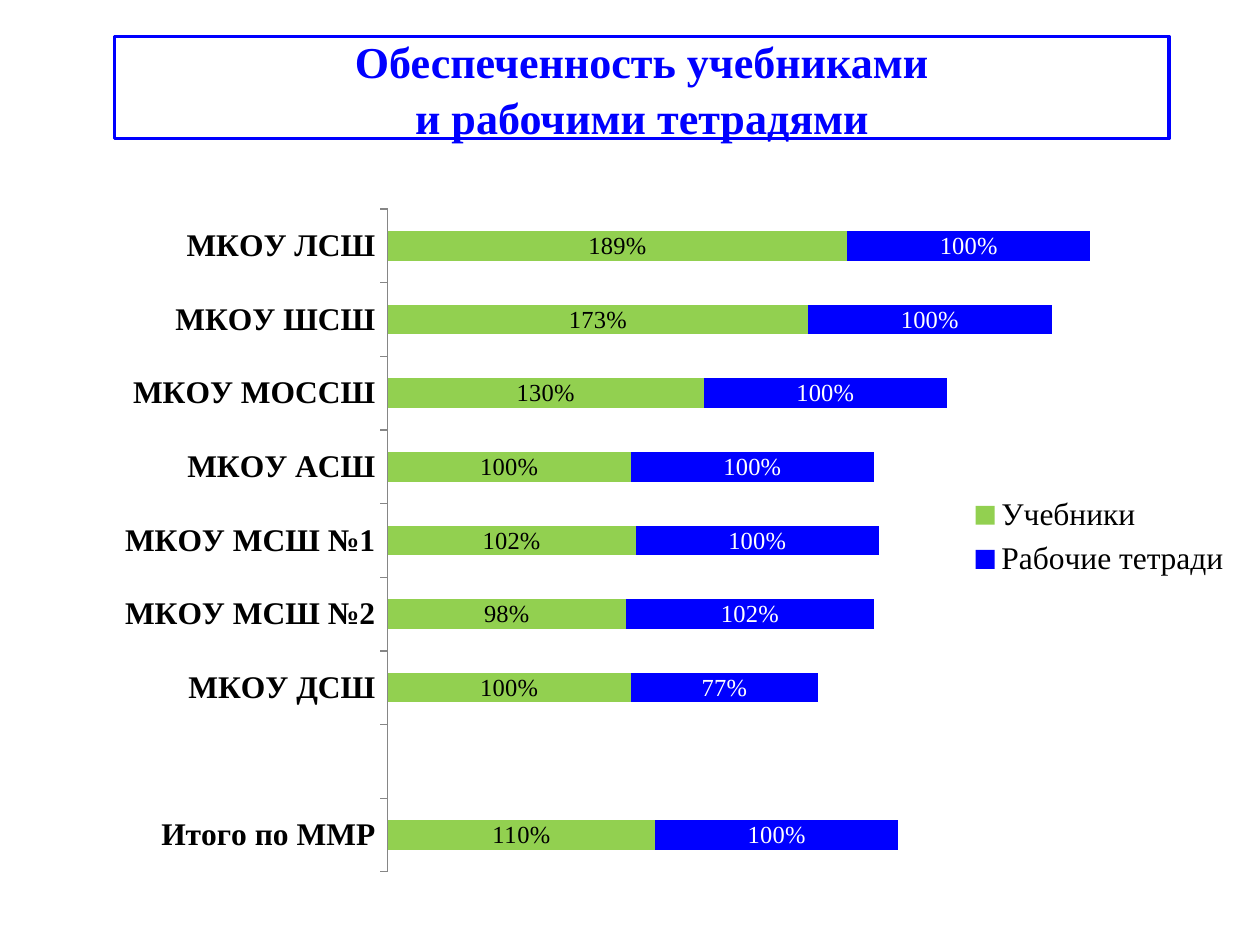
from lxml import etree
from pptx import Presentation
from pptx.chart.data import CategoryChartData
from pptx.dml.color import RGBColor
from pptx.enum.chart import XL_CHART_TYPE, XL_LABEL_POSITION, XL_LEGEND_POSITION, XL_TICK_MARK
from pptx.enum.shapes import MSO_SHAPE
from pptx.enum.text import MSO_ANCHOR, PP_ALIGN
from pptx.oxml.ns import qn
from pptx.util import Inches, Pt

STACKED_BARS = XL_CHART_TYPE.BAR_STACKED
LABEL_CENTER = XL_LABEL_POSITION.CENTER
LEGEND_RIGHT = XL_LEGEND_POSITION.RIGHT
TICK_OUTSIDE, TICK_NONE = XL_TICK_MARK.OUTSIDE, XL_TICK_MARK.NONE
RECTANGLE = MSO_SHAPE.RECTANGLE
MIDDLE, CENTER = MSO_ANCHOR.MIDDLE, PP_ALIGN.CENTER

BLUE = RGBColor(0x00, 0x00, 0xFF)
GREEN = RGBColor(0x92, 0xD0, 0x50)
GRAY = RGBColor(0x86, 0x86, 0x86)
BLACK = RGBColor(0x00, 0x00, 0x00)
WHITE = RGBColor(0xFF, 0xFF, 0xFF)
FONT = "Times New Roman"

TITLE_BOX = (0.91, 0.29, 8.37, 0.81)
CHART_BOX = (0.2, 1.47, 9.69, 5.59)
# Shares of the chart: left, top, width, height
PLOT_AREA = (0.297, 0.034, 0.697, 0.941)
LEGEND_AREA = (0.77, 0.43, 0.22, 0.14)

TITLE_LINES = ["Обеспеченность учебниками", "и рабочими тетрадями"]
# Rows run from the bottom of the chart upwards
ROWS = [
    ("Итого по ММР", 110, 100),
    ("", None, None),
    ("МКОУ ДСШ", 100, 77),
    ("МКОУ МСШ №2", 98, 102),
    ("МКОУ МСШ №1", 102, 100),
    ("МКОУ АСШ", 100, 100),
    ("МКОУ МОССШ", 130, 100),
    ("МКОУ ШСШ", 173, 100),
    ("МКОУ ЛСШ", 189, 100),
]
# Name, bar colour, label colour
SERIES = [("Учебники", GREEN, BLACK), ("Рабочие тетради", BLUE, WHITE)]


def style_font(font, size, color=BLACK, bold=False):
    font.name = FONT
    font.size = Pt(size)
    font.bold = bold
    font.color.rgb = color


def write_lines(frame, lines, line_spacing=1.0, **style):
    for index, line in enumerate(lines):
        para = frame.paragraphs[0] if index == 0 else frame.add_paragraph()
        para.alignment = CENTER
        para.line_spacing = line_spacing
        span = para.add_run()
        span.text = line
        style_font(span.font, **style)


def place_chart_part(part, area, inner=False):
    """Give a plot area or legend element a manual layout in shares of the chart."""
    layout = part.find(qn("c:layout"))
    if layout is None:
        layout = etree.Element(qn("c:layout"))
        position = part.find(qn("c:legendPos"))
        if position is None:
            part.insert(0, layout)
        else:
            position.addnext(layout)
    manual = etree.SubElement(layout, qn("c:manualLayout"))
    settings = [("layoutTarget", "inner")] if inner else []
    settings += [("xMode", "edge"), ("yMode", "edge")]
    settings += zip("xywh", area)
    for name, value in settings:
        etree.SubElement(manual, qn(f"c:{name}")).set("val", str(value))


def add_title(page, box):
    title = page.shapes.add_shape(RECTANGLE, *map(Inches, box))
    title.shadow.inherit = False
    title.fill.solid()
    title.fill.fore_color.rgb = WHITE
    title.line.color.rgb = BLUE
    title.line.width = Pt(2)
    frame = title.text_frame
    frame.word_wrap = True
    frame.vertical_anchor = MIDDLE
    write_lines(frame, TITLE_LINES, line_spacing=1.05, size=25.2, color=BLUE, bold=True)


def style_axes(chart):
    category_axis = chart.category_axis
    category_axis.major_tick_mark = TICK_OUTSIDE
    category_axis.minor_tick_mark = TICK_NONE
    category_axis.format.line.color.rgb = GRAY
    style_font(category_axis.tick_labels.font, 18, bold=True)
    value_axis = chart.value_axis
    value_axis.minimum_scale, value_axis.maximum_scale = 0, 350
    value_axis.has_major_gridlines = False
    value_axis.visible = False


def style_series(series, bar_color, label_color):
    series.format.fill.solid()
    series.format.fill.fore_color.rgb = bar_color
    labels = series.data_labels
    labels.show_value = True
    labels.position = LABEL_CENTER
    labels.number_format = '0"%"'
    labels.number_format_is_linked = False
    style_font(labels.font, 14, label_color)


def add_supply_chart(page, box):
    names, *columns = zip(*ROWS)
    chart_data = CategoryChartData()
    chart_data.categories = names
    for (name, _, _), values in zip(SERIES, columns):
        chart_data.add_series(name, values)
    chart = page.shapes.add_chart(STACKED_BARS, *map(Inches, box), chart_data).chart
    chart.has_title = False
    style_font(chart.font, 18)
    style_axes(chart)

    plot = chart.plots[0]
    plot.gap_width, plot.overlap = 150, 100
    plot.vary_by_categories = False
    for series, (_, bar_color, label_color) in zip(plot.series, SERIES):
        style_series(series, bar_color, label_color)

    chart.has_legend = True
    legend = chart.legend
    legend.position = LEGEND_RIGHT
    legend.include_in_layout = False
    style_font(legend.font, 18)
    chart_element = chart.element.find(qn("c:chart"))
    place_chart_part(chart_element.find(qn("c:plotArea")), PLOT_AREA, inner=True)
    place_chart_part(chart_element.find(qn("c:legend")), LEGEND_AREA)


def main():
    deck = Presentation()
    deck.slide_width, deck.slide_height = Inches(10), Inches(7.5)
    page = deck.slides.add_slide(deck.slide_layouts[6])
    add_title(page, TITLE_BOX)
    add_supply_chart(page, CHART_BOX)
    deck.save("out.pptx")


if __name__ == "__main__":
    main()
